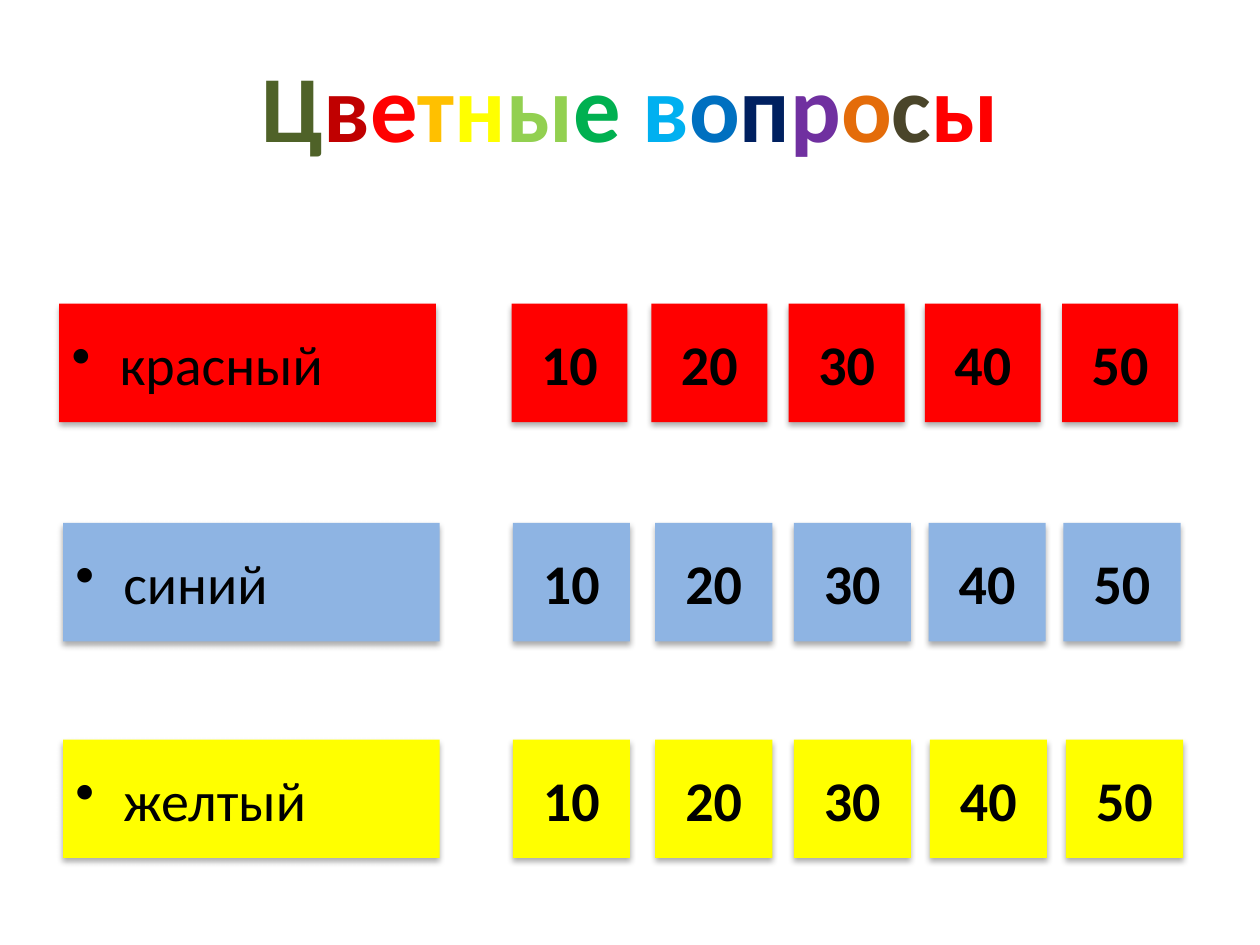
import lxml.etree
import pptx
import pptx.dml.color
import pptx.enum.shapes
import pptx.enum.text
import pptx.oxml
import pptx.oxml.ns
import pptx.util

Inches = pptx.util.Inches
RGBColor = pptx.dml.color.RGBColor
ALIGN = pptx.enum.text.PP_ALIGN
MIDDLE = pptx.enum.text.MSO_ANCHOR.MIDDLE

BLACK = RGBColor(0x00, 0x00, 0x00)
RED = RGBColor(0xFF, 0x00, 0x00)
BLUE = RGBColor(0x8E, 0xB4, 0xE3)
YELLOW = RGBColor(0xFF, 0xFF, 0x00)
TITLE_LETTERS = [
    ("Ц", RGBColor(0x4F, 0x62, 0x28)), ("в", RGBColor(0xC0, 0x00, 0x00)),
    ("е", RED), ("т", RGBColor(0xFF, 0xC0, 0x00)),
    ("н", YELLOW), ("ы", RGBColor(0x92, 0xD0, 0x50)),
    ("е ", RGBColor(0x00, 0xB0, 0x50)), ("в", RGBColor(0x00, 0xB0, 0xF0)),
    ("о", RGBColor(0x00, 0x70, 0xC0)), ("п", RGBColor(0x00, 0x20, 0x60)),
    ("р", RGBColor(0x70, 0x30, 0xA0)), ("о", RGBColor(0xE4, 0x6C, 0x0A)),
    ("с", RGBColor(0x4A, 0x45, 0x2A)), ("ы", RED),
]
SHADOW = (
    f'<a:effectLst {pptx.oxml.ns.nsdecls("a")}>'
    '<a:outerShdw blurRad="44450" dist="27940" dir="5400000" algn="ctr" rotWithShape="0">'
    '<a:srgbClr val="000000"><a:alpha val="32000"/></a:srgbClr>'
    '</a:outerShdw></a:effectLst>'
)


def add_text(paragraph, text, size=32, color=BLACK, bold=False,
             align=ALIGN.LEFT, bullet=False):
    paragraph.alignment = align
    if bullet:
        properties = paragraph._p.get_or_add_pPr()
        properties.set("marL", str(Inches(0.38)))
        properties.set("indent", str(Inches(-0.38)))
        mark = lxml.etree.SubElement(properties, pptx.oxml.ns.qn("a:buChar"))
        mark.set("char", "•")
    run = paragraph.add_run()
    run.text = text
    run.font.name = "Calibri"
    run.font.size = pptx.util.Pt(size)
    run.font.bold = bold
    run.font.color.rgb = color


def add_card(left, top, width, fill, text, **text_format):
    card = slide.shapes.add_shape(
        pptx.enum.shapes.MSO_SHAPE.RECTANGLE,
        Inches(left), Inches(top), Inches(width), Inches(0.94))
    card.fill.solid()
    card.fill.fore_color.rgb = fill
    card.line.fill.background()
    card._element.spPr.append(pptx.oxml.parse_xml(SHADOW))
    card.text_frame.word_wrap = True
    card.text_frame.vertical_anchor = MIDDLE
    add_text(card.text_frame.paragraphs[0], text, **text_format)


presentation = pptx.Presentation()
presentation.slide_width = Inches(10)
presentation.slide_height = Inches(7.5)
slide = presentation.slides.add_slide(presentation.slide_layouts[5])

# Title, one colour per letter
title = slide.shapes.title
title.left, title.top = Inches(0.5), Inches(0.21)
title.width, title.height = Inches(9), Inches(1.25)
title.text_frame.vertical_anchor = MIDDLE
for letter, color in TITLE_LETTERS:
    add_text(title.text_frame.paragraphs[0], letter, size=54, color=color,
             bold=True, align=ALIGN.CENTER)

# Topic rows: a label, then its point cards (spacing differs by row)
topics = [
    ("красный", RED, 0.47, 2.41, 0.92, [4.06, 5.17, 6.26, 7.34, 8.43]),
    ("синий", BLUE, 0.5, 4.15, 0.93, [4.07, 5.2, 6.3, 7.37, 8.44]),
    ("желтый", YELLOW, 0.5, 5.87, 0.93, [4.07, 5.2, 6.3, 7.38, 8.46]),
]
for topic, fill, label_left, top, card_width, card_lefts in topics:
    add_card(label_left, top, 2.99, fill, topic, bullet=True)
    for number, left in enumerate(card_lefts, start=1):
        add_card(left, top, card_width, fill, str(number * 10),
                 bold=True, align=ALIGN.CENTER)

presentation.save("out.pptx")
